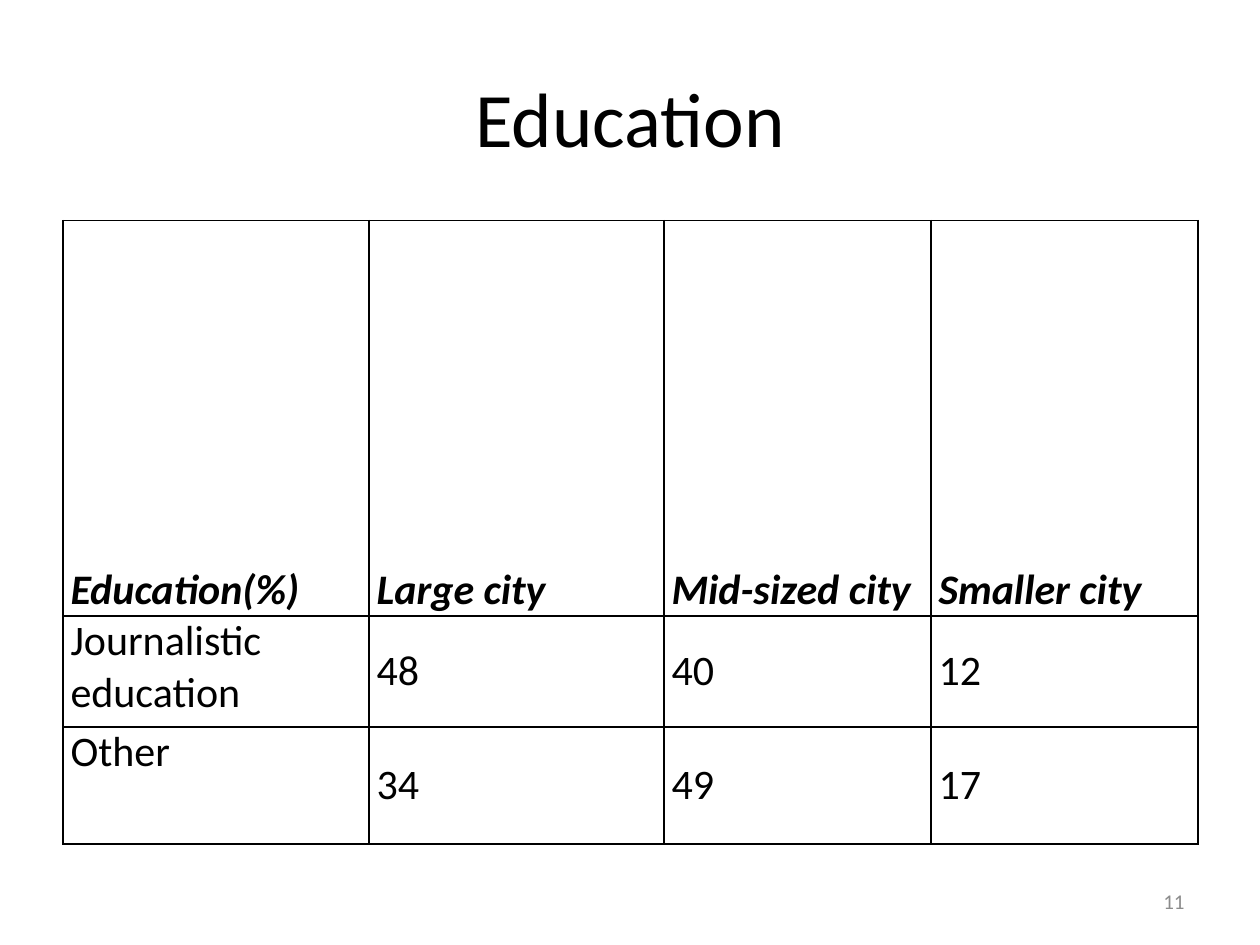
"""Build the slide on journalists' education by city size."""
from typing import NamedTuple

from lxml.etree import SubElement
from pptx import Presentation
from pptx.dml.color import RGBColor
from pptx.enum.text import MSO_ANCHOR, PP_ALIGN
from pptx.oxml.ns import qn
from pptx.util import Inches, Pt

BLACK = RGBColor(0, 0, 0)
GREY = RGBColor(0x8C, 0x8C, 0x8C)
WHITE = RGBColor(255, 255, 255)
FACE = "Calibri"
WIDTHS = (2.43, 2.34, 2.12, 2.12)


class Row(NamedTuple):
    height: float
    texts: tuple[str, ...]
    anchors: tuple[MSO_ANCHOR, ...]
    bold: bool = False


SIDES = (MSO_ANCHOR.TOP,) + (MSO_ANCHOR.MIDDLE,) * 3
ROWS = (
    Row(3.14, ("Education(%)", "Large city", "Mid-sized city", "Smaller city"),
        (MSO_ANCHOR.BOTTOM,) * 4, True),
    Row(0.88, ("Journalistic education", "48", "40", "12"), SIDES),
    Row(0.93, ("Other", "34", "49", "17"), SIDES),
)


def write(frame, text: str, size: int, align: PP_ALIGN,
          color: RGBColor = BLACK, bold: bool = False) -> None:
    """Put one formatted paragraph into a text frame."""
    para = frame.paragraphs[0]
    para.alignment = align
    run = para.add_run()
    run.text = text
    look = {"name": FACE, "size": Pt(size), "bold": bold, "italic": bold}
    for key, value in look.items():
        setattr(run.font, key, value)
    run.font.color.rgb = color


def place(shape, left: float, top: float, width: float, height: float) -> None:
    """Set the position and size of a shape in inches."""
    box = {"left": left, "top": top, "width": width, "height": height}
    for key, value in box.items():
        setattr(shape, key, Inches(value))


def frame_cell(cell) -> None:
    """Draw a thin black border on all sides of a cell."""
    props = cell._tc.get_or_add_tcPr()
    for spot, side in enumerate(("lnL", "lnR", "lnT", "lnB")):
        line = SubElement(props, qn(f"a:{side}"), w=str(Pt(1)))
        fill = SubElement(line, qn("a:solidFill"))
        SubElement(fill, qn("a:srgbClr"), val=str(BLACK))
        props.insert(spot, line)


def fill_cell(cell, text: str, anchor: MSO_ANCHOR, bold: bool) -> None:
    """Format one table cell and write its text."""
    look = {"margin_left": Inches(0.06), "margin_right": Inches(0.06),
            "margin_top": 0, "margin_bottom": 0, "vertical_anchor": anchor}
    for key, value in look.items():
        setattr(cell, key, value)
    cell.fill.solid()
    cell.fill.fore_color.rgb = WHITE
    frame_cell(cell)
    write(cell.text_frame, text, 24, PP_ALIGN.JUSTIFY, bold=bold)


def add_grid(slide) -> None:
    """Add the education table."""
    table = slide.shapes.add_table(
        len(ROWS), len(WIDTHS), Inches(0.5), Inches(1.75),
        Inches(9), Inches(4.95)).table
    for key in ("first_row", "horz_banding"):
        setattr(table, key, False)
    for col, width in zip(table.columns, WIDTHS):
        col.width = Inches(width)
    for line, row in zip(table.rows, ROWS):
        line.height = Inches(row.height)
        for cell, text, anchor in zip(line.cells, row.texts, row.anchors):
            fill_cell(cell, text, anchor, row.bold)


def main() -> None:
    """Build and save the slide."""
    deck = Presentation()
    deck.slide_width, deck.slide_height = Inches(10), Inches(7.5)
    slide = deck.slides.add_slide(deck.slide_layouts[5])
    title = slide.shapes.title
    place(title, 0.5, 0.3, 9, 1.25)
    title.text_frame.vertical_anchor = MSO_ANCHOR.MIDDLE
    write(title.text_frame, "Education", 44, PP_ALIGN.CENTER)
    add_grid(slide)
    number = slide.shapes.add_textbox(0, 0, 0, 0)
    place(number, 7.17, 6.95, 2.33, 0.4)
    number.text_frame.word_wrap = True
    number.text_frame.vertical_anchor = MSO_ANCHOR.MIDDLE
    write(number.text_frame, "11", 12, PP_ALIGN.RIGHT, GREY)
    deck.save("out.pptx")


if __name__ == "__main__":
    main()
